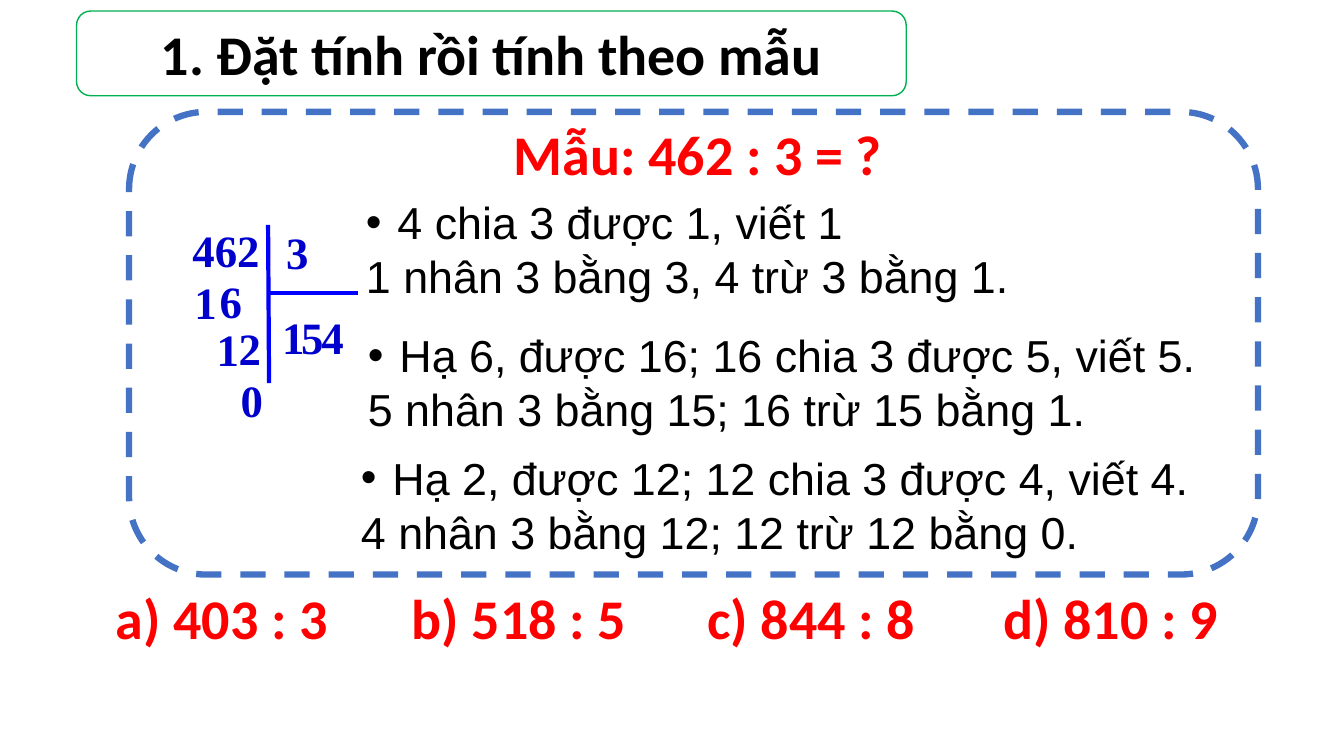
"""Builds a slide on long division with a worked sample and four tasks."""
from lxml import etree
from pptx import Presentation
from pptx.dml.color import RGBColor
from pptx.enum import dml, shapes, text
from pptx.oxml import ns
from pptx.util import Pt

HUES = {"ink": "000000", "red": "FF0000", "digit": "0000CC", "rule": "0000FF",
        "green": "00B050", "blue": "4472C4", "white": "FFFFFF"}
FONTS = {
    "head": {"name": "Calibri", "size": 40, "bold": True, "hue": "ink"},
    "task": {"name": "Calibri", "size": 40, "bold": True, "hue": "red"},
    "digit": {"name": "Times New Roman", "size": 32, "bold": True, "hue": "digit"},
    "step": {"name": "Arial", "size": 32, "bold": False, "hue": "ink"},
}
TITLE = ("1. Đặt tính rồi tính theo mẫu", (54.7, 7.9, 592.6, 60.5))
SAMPLE = ("Mẫu: 462 : 3 = ?", (360, 82.1, 501, 55.4))
FRAME = (92.2, 79.9, 806.4, 330.5)
TASKS = ["a) 403 : 3", "b) 518 : 5", "c) 844 : 8", "d) 810 : 9"]
GRID = (82.8, 419, 845.2, 48.2)
DIGITS = [
    ("3", 197.3, 157), ("462", 130.3, 155.5),
    ("1", 194.4, 217.4), ("5", 208.1, 217.4), ("4", 222.5, 217.4),
    ("1", 131.8, 193), ("6", 149.8, 192.2),
    ("1", 147.6, 226.1), ("2", 163.4, 225.4), ("0", 164.9, 262.8),
]
RULES = [(190.8, 209.5, 255.6, 209.5), (191.5, 160.6, 192.2, 273.6)]
STEPS = [
    (("4 chia 3 được 1, viết 1", "1 nhân 3 bằng 3, 4 trừ 3 bằng 1."),
     (261.4, 139, 526.3, 77.8)),
    (("Hạ 6, được 16; 16 chia 3 được 5, viết 5.", "5 nhân 3 bằng 15; 16 trừ 15 bằng 1."),
     (262.8, 234, 648.7, 77.8)),
    (("Hạ 2, được 12; 12 chia 3 được 4, viết 4.", "4 nhân 3 bằng 12; 12 trừ 12 bằng 0."),
     (257.8, 321.8, 635, 77.8)),
]
INDENT = 22.5
BARE = dict.fromkeys(("margin_left", "margin_right", "margin_top", "margin_bottom"), 0)


def put(thing, vals):
    """Set each named value on a thing."""
    for key, val in vals.items():
        setattr(thing, key, val)


def tint(hue):
    """Give the colour for a hue name."""
    return RGBColor.from_string(HUES[hue])


def write(para, words, kind):
    """Write words in one of the named fonts."""
    look = FONTS[kind]
    run = para.add_run()
    run.text = words
    put(run.font, {"name": look["name"], "size": Pt(look["size"]), "bold": look["bold"]})
    run.font.color.rgb = tint(look["hue"])


def dot(para):
    """Add a hanging bullet to a paragraph."""
    props = para._p.get_or_add_pPr()
    put_at = {"marL": Pt(INDENT), "indent": -Pt(INDENT)}
    for key, val in put_at.items():
        props.set(key, str(val))
    etree.SubElement(props, ns.qn("a:buFont")).set("typeface", "Arial")
    etree.SubElement(props, ns.qn("a:buChar")).set("char", "•")


def label(slide, lines, area, kind, form=None):
    """Add a text box with one paragraph per line."""
    body = slide.shapes.add_textbox(*map(Pt, area)).text_frame
    put(body, {"word_wrap": True, "auto_size": text.MSO_AUTO_SIZE.SHAPE_TO_FIT_TEXT,
               **(form or {})})
    for num, words in enumerate(lines):
        para = body.add_paragraph() if num else body.paragraphs[0]
        if kind == "step" and num == 0:
            dot(para)
        write(para, words, kind)


def panel(slide, area, hue, width):
    """Add a white rounded panel with a coloured edge."""
    box = slide.shapes.add_shape(shapes.MSO_SHAPE.ROUNDED_RECTANGLE, *map(Pt, area))
    box.shadow.inherit = False
    box.fill.solid()
    box.fill.fore_color.rgb = tint("white")
    box.line.color.rgb = tint(hue)
    box.line.width = Pt(width)
    return box


def rule(slide, ends):
    """Add one straight line of the division bracket."""
    line = slide.shapes.add_connector(shapes.MSO_CONNECTOR.STRAIGHT, *map(Pt, ends))
    line.line.color.rgb = tint("rule")
    line.line.width = Pt(3)
    etree.SubElement(line._element.spPr, ns.qn("a:effectLst"))


def tasks(slide):
    """Add the row of tasks as a plain table."""
    table = slide.shapes.add_table(1, len(TASKS), *map(Pt, GRID)).table
    put(table, {"first_row": False, "horz_banding": False})
    for col, words in enumerate(TASKS):
        table.columns[col].width = Pt(GRID[2] / len(TASKS))
        cell = table.cell(0, col)
        cell.fill.background()
        put(cell, BARE)
        para = cell.text_frame.paragraphs[0]
        para.alignment = text.PP_ALIGN.JUSTIFY
        write(para, words, "task")


def main():
    """Build and save the slide."""
    deck = Presentation()
    put(deck, {"slide_width": Pt(960), "slide_height": Pt(540)})
    slide = deck.slides.add_slide(deck.slide_layouts[6])
    words, area = TITLE
    body = panel(slide, area, "green", 1).text_frame
    put(body, {"word_wrap": True, "vertical_anchor": text.MSO_ANCHOR.MIDDLE})
    body.paragraphs[0].alignment = text.PP_ALIGN.CENTER
    write(body.paragraphs[0], words, "head")
    tasks(slide)
    panel(slide, FRAME, "blue", 4.5).line.dash_style = dml.MSO_LINE.DASH
    for ends in RULES:
        rule(slide, ends)
    for words, left, top in DIGITS:
        label(slide, [words], (left, top, 14.4 + 16 * len(words), 46), "digit")
    for lines, area in STEPS:
        label(slide, lines, area, "step", BARE)
    words, area = SAMPLE
    label(slide, [words], area, "task")
    deck.save("out.pptx")


if __name__ == "__main__":
    main()
